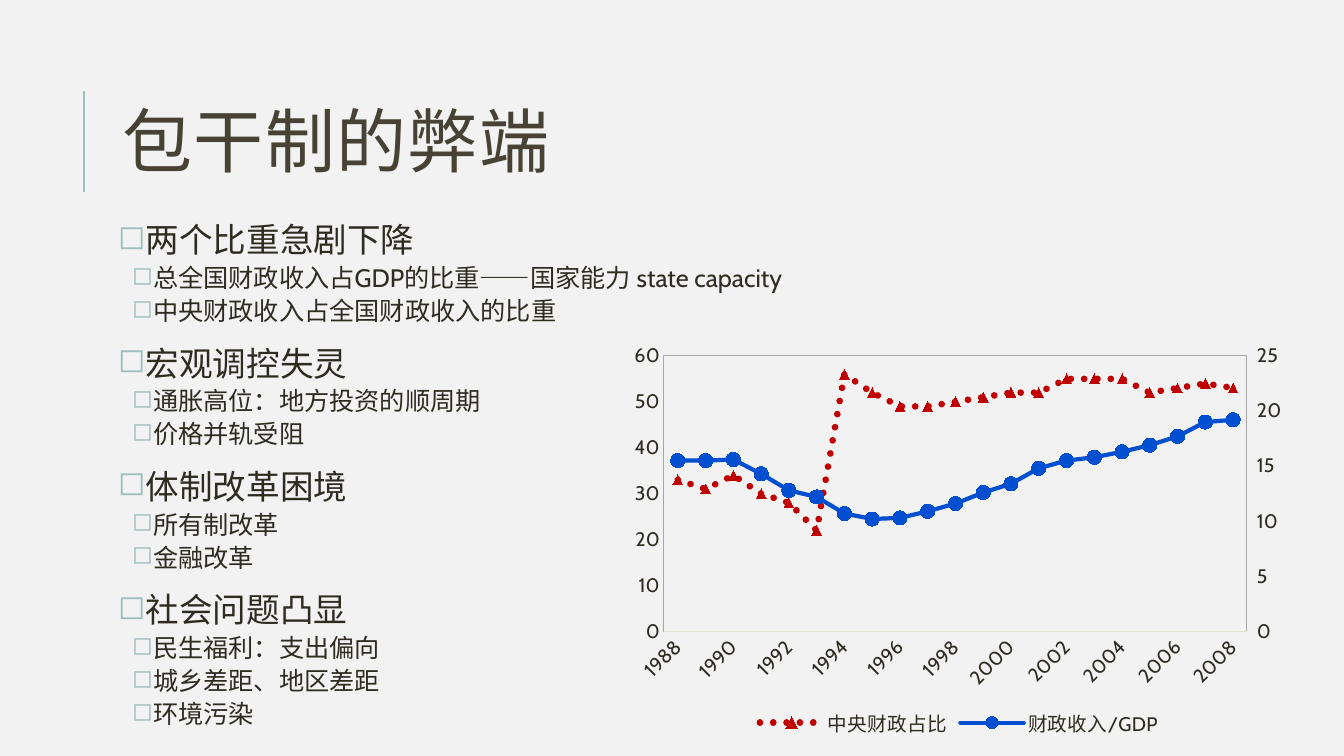
from copy import deepcopy

from lxml.etree import SubElement
from pptx import Presentation
from pptx.chart.data import CategoryChartData
from pptx.dml.color import RGBColor
from pptx.enum.chart import (
    XL_CHART_TYPE as ChartType,
    XL_LEGEND_POSITION as LegendPosition,
    XL_MARKER_STYLE as MarkerStyle,
    XL_TICK_MARK as TickMark,
)
from pptx.enum.dml import MSO_LINE_DASH_STYLE as DashStyle
from pptx.enum.shapes import MSO_CONNECTOR as Connector
from pptx.enum.text import MSO_ANCHOR as Anchor
from pptx.oxml import parse_xml
from pptx.oxml.ns import nsdecls, qn
from pptx.util import Cm, Pt

TEXT, TITLE, ACCENT = "2E2B21", "474233", "9CBEBD"
BODY_FONT = "Cabin"

OUTLINE = [
    ("两个比重急剧下降", [
        "总全国财政收入占GDP的比重——国家能力 state capacity",
        "中央财政收入占全国财政收入的比重"]),
    ("宏观调控失灵", ["通胀高位：地方投资的顺周期", "价格并轨受阻"]),
    ("体制改革困境", ["所有制改革", "金融改革"]),
    ("社会问题凸显", ["民生福利：支出偏向", "城乡差距、地区差距", "环境污染"]),
]
# Indents are in centimetres, sizes and spacing in points
LEVELS = [
    {"size": 24, "before": 12, "margin": 0.25, "indent": -0.25},
    {"size": 18, "before": 2, "margin": 0.74, "indent": -0.38},
]

YEARS = range(1988, 2009)
CENTRAL_SHARE = [33, 31, 34, 30, 28, 22, 56, 52, 49, 49, 50,
                 51, 52, 52, 55, 55, 55, 52, 53, 54, 53]
REVENUE_TO_GDP = [15.5, 15.5, 15.6, 14.3, 12.8, 12.2, 10.7, 10.2, 10.3, 10.9, 11.6,
                  12.6, 13.4, 14.8, 15.5, 15.8, 16.3, 16.9, 17.7, 19, 19.2]
SERIES_STYLES = [
    {"color": "C00000", "width": 4.75, "dash": DashStyle.ROUND_DOT,
     "marker": MarkerStyle.TRIANGLE, "size": 7},
    {"color": "004FD0", "width": 3, "dash": DashStyle.SOLID,
     "marker": MarkerStyle.CIRCLE, "size": 10},
]


def rgb(color):
    return RGBColor.from_string(color)


def set_attributes(target, values):
    for name, value in values.items():
        setattr(target, name, value)


def set_font(font, size, color, name=BODY_FONT):
    set_attributes(font, {"size": Pt(size), "name": name})
    font.color.rgb = rgb(color)


def add_text_frame(slide, left, top, width, height):
    box = slide.shapes.add_textbox(Cm(left), Cm(top), Cm(width), Cm(height))
    frame = box.text_frame
    set_attributes(frame, {"word_wrap": True, "vertical_anchor": Anchor.MIDDLE})
    return frame


def add_accent_line(slide):
    line = slide.shapes.add_connector(
        Connector.STRAIGHT, Cm(2.11), Cm(4.83), Cm(2.11), Cm(2.29))
    line.line.color.rgb = rgb(ACCENT)
    line.line.width = Pt(1.5)
    SubElement(line._element.spPr, qn("a:effectLst"))


def add_title(slide, text):
    paragraph = add_text_frame(slide, 2.84, 1.63, 27, 4.17).paragraphs[0]
    paragraph.line_spacing = 0.8
    run = paragraph.add_run()
    run.text = text
    set_font(run.font, 50, TITLE, "Calibri")
    run._r.get_or_add_rPr().set("spc", "100")


def add_bullet(paragraph, text, level):
    style = LEVELS[level]
    set_attributes(paragraph, {"level": level, "space_before": Pt(style["before"])})
    properties = paragraph._p.get_or_add_pPr()
    properties.set("marL", str(Cm(style["margin"])))
    properties.set("indent", str(Cm(style["indent"])))
    color = SubElement(properties, qn("a:buClr"))
    SubElement(color, qn("a:srgbClr"), val=ACCENT)
    SubElement(properties, qn("a:buChar"), char="◻")
    run = paragraph.add_run()
    run.text = text
    set_font(run.font, style["size"], TEXT)


def add_outline(slide):
    frame = add_text_frame(slide, 2.84, 6.35, 29.77, 11.18)
    for side in ("left", "right", "top", "bottom"):
        setattr(frame, f"margin_{side}", Cm(0.13))
    lines = [(text, level) for heading, points in OUTLINE
             for text, level in [(heading, 0)] + [(point, 1) for point in points]]
    for index, (text, level) in enumerate(lines):
        paragraph = frame.add_paragraph() if index else frame.paragraphs[0]
        add_bullet(paragraph, text, level)


def style_series(series, style):
    color = rgb(style["color"])
    series.smooth = False
    line = series.format.line
    line.color.rgb = color
    set_attributes(line, {"width": Pt(style["width"]), "dash_style": style["dash"]})
    series._element.spPr.find(qn("a:ln")).set("cap", "rnd")
    marker = series.marker
    set_attributes(marker, {"style": style["marker"], "size": style["size"]})
    marker.format.fill.solid()
    marker.format.fill.fore_color.rgb = color
    marker.format.line.color.rgb = color


def style_axes(chart):
    years, shares = chart.category_axis, chart.value_axis
    for axis in (years, shares):
        set_attributes(axis, {"major_tick_mark": TickMark.NONE,
                              "minor_tick_mark": TickMark.NONE,
                              "has_major_gridlines": False})
        set_font(axis.tick_labels.font, 14, TEXT)
    set_attributes(shares, {"minimum_scale": 0, "maximum_scale": 60, "major_unit": 10})
    shares.format.line.fill.background()
    years.format.line.color.rgb = rgb("E4E2D9")
    years.format.line.width = Pt(0.75)
    years._element.find(qn("c:txPr")).find(qn("a:bodyPr")).set("rot", "-2700000")
    skip = parse_xml(f'<c:tickLblSkip {nsdecls("c")} val="2"/>')
    years._element.find(qn("c:noMultiLvlLbl")).addprevious(skip)


def move_to_right_axis(chart):
    """Give the last series its own line group and a second pair of axes."""
    plot_area = chart._chartSpace.chart.plotArea
    left_group = plot_area.find(qn("c:lineChart"))
    right_group = deepcopy(left_group)
    left_group.remove(left_group.findall(qn("c:ser"))[1])
    right_group.remove(right_group.findall(qn("c:ser"))[0])
    left_group.addnext(right_group)

    right_ids = ["50010", "50020"]
    for node, axis_id in zip(right_group.findall(qn("c:axId")), right_ids):
        node.set("val", axis_id)
    left_axes = [chart.category_axis._element, chart.value_axis._element]
    right_axes = [deepcopy(axis) for axis in left_axes]
    for axis, own, crossed in zip(right_axes, right_ids, right_ids[::-1]):
        axis.find(qn("c:axId")).set("val", own)
        axis.find(qn("c:crossAx")).set("val", crossed)
    hidden_years, ratios = right_axes
    hidden_years.find(qn("c:delete")).set("val", "1")
    for tag, value in {"c:axPos": "r", "c:majorTickMark": "out",
                       "c:crosses": "max", "c:majorUnit": "5"}.items():
        ratios.find(qn(tag)).set("val", value)
    ratios.find(qn("c:scaling")).find(qn("c:max")).set("val", "25")
    left_axes[1].addnext(ratios)
    ratios.addnext(hidden_years)


def frame_plot_area(chart):
    plot_area = chart._chartSpace.chart.plotArea
    for layout in plot_area.findall(qn("c:layout")):
        plot_area.remove(layout)
    places = {"x": 0.06, "y": 0.05, "w": 0.87, "h": 0.68}
    modes = "".join(f'<c:{key}Mode val="edge"/>' for key in "xy")
    sizes = "".join(f'<c:{key} val="{value}"/>' for key, value in places.items())
    plot_area.insert(0, parse_xml(
        f'<c:layout {nsdecls("c")}><c:manualLayout><c:layoutTarget val="inner"/>'
        f'{modes}{sizes}</c:manualLayout></c:layout>'))
    plot_area.append(parse_xml(
        f'<c:spPr {nsdecls("c", "a")}><a:noFill/><a:ln w="9525"><a:solidFill>'
        '<a:srgbClr val="A6A6A6"/></a:solidFill></a:ln></c:spPr>'))


def add_revenue_chart(slide):
    data = CategoryChartData(number_format="General")
    data.categories = YEARS
    data.add_series("中央财政占比", CENTRAL_SHARE)
    data.add_series("财政收入/GDP", REVENUE_TO_GDP)
    chart = slide.shapes.add_chart(
        ChartType.LINE_MARKERS, Cm(15.72), Cm(8.46), Cm(16.89), Cm(10.21), data).chart
    set_attributes(chart, {"has_title": False, "has_legend": True})
    set_font(chart.font, 14, TEXT)
    set_attributes(chart.legend, {"position": LegendPosition.BOTTOM,
                                  "include_in_layout": False})
    set_font(chart.legend.font, 14, TEXT)
    chart.plots[0].vary_by_categories = False
    for series, style in zip(chart.plots[0].series, SERIES_STYLES):
        style_series(series, style)
    style_axes(chart)
    move_to_right_axis(chart)
    frame_plot_area(chart)


def main():
    presentation = Presentation()
    set_attributes(presentation, {"slide_width": Cm(33.87), "slide_height": Cm(19.05)})
    slide = presentation.slides.add_slide(presentation.slide_layouts[6])
    slide.background.fill.solid()
    slide.background.fill.fore_color.rgb = rgb("F2F2F2")
    add_accent_line(slide)
    add_title(slide, "包干制的弊端")
    add_outline(slide)
    add_revenue_chart(slide)
    presentation.save("out.pptx")


if __name__ == "__main__":
    main()
